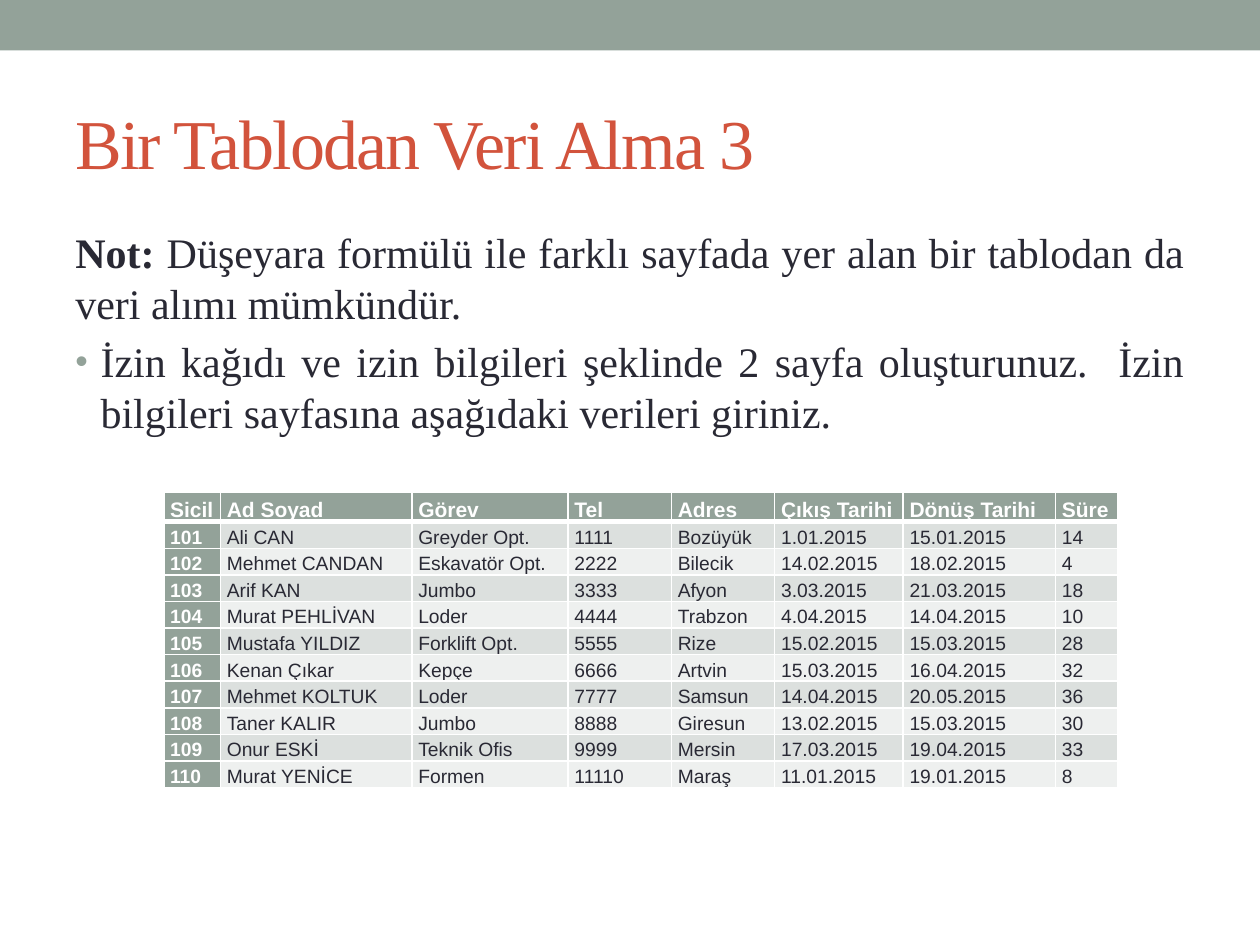
import pptx
import pptx.util
import pptx.dml.color
import pptx.enum.shapes
import pptx.enum.text
import pptx.oxml
import pptx.oxml.ns
from pptx.util import Inches
from lxml import etree

COLORS = {
    "sage": "93A299",
    "title": "D2533C",
    "text": "292934",
    "white": "FFFFFF",
    "odd_row": "DCE0DE",
    "even_row": "EEF0EF",
}
SERIF = "Times New Roman"
SANS = "Arial"
COLUMN_WIDTHS = [0.45, 1.52, 1.24, 0.82, 0.82, 1.02, 1.21, 0.49]
HEADER_HEIGHT = 0.22
LEAVE_RECORDS = [
    ["Sicil", "Ad Soyad", "Görev", "Tel", "Adres", "Çıkış Tarihi", "Dönüş Tarihi", "Süre"],
    ["101", "Ali CAN", "Greyder Opt.", "1111", "Bozüyük", "1.01.2015", "15.01.2015", "14"],
    ["102", "Mehmet CANDAN", "Eskavatör Opt.", "2222", "Bilecik", "14.02.2015", "18.02.2015", "4"],
    ["103", "Arif KAN", "Jumbo", "3333", "Afyon", "3.03.2015", "21.03.2015", "18"],
    ["104", "Murat PEHLİVAN", "Loder", "4444", "Trabzon", "4.04.2015", "14.04.2015", "10"],
    ["105", "Mustafa YILDIZ", "Forklift Opt.", "5555", "Rize", "15.02.2015", "15.03.2015", "28"],
    ["106", "Kenan Çıkar", "Kepçe", "6666", "Artvin", "15.03.2015", "16.04.2015", "32"],
    ["107", "Mehmet KOLTUK", "Loder", "7777", "Samsun", "14.04.2015", "20.05.2015", "36"],
    ["108", "Taner KALIR", "Jumbo", "8888", "Giresun", "13.02.2015", "15.03.2015", "30"],
    ["109", "Onur ESKİ", "Teknik Ofis", "9999", "Mersin", "17.03.2015", "19.04.2015", "33"],
    ["110", "Murat YENİCE", "Formen", "11110", "Maraş", "11.01.2015", "19.01.2015", "8"],
]


def rgb(name):
    return pptx.dml.color.RGBColor.from_string(COLORS[name])


def set_font(font, name, size, color, bold=None):
    font.name = name
    font.size = pptx.util.Pt(size)
    font.color.rgb = rgb(color)
    font.bold = bold


def add_text_frame(slide, left, top, width, height):
    shape = slide.shapes.add_textbox(left, top, width, height)
    shape.text_frame.word_wrap = True
    return shape.text_frame


def add_band(slide, left, top, width, height):
    band = slide.shapes.add_shape(
        pptx.enum.shapes.MSO_SHAPE.RECTANGLE, left, top, width, height)
    band.shadow.inherit = False
    band.fill.solid()
    band.fill.fore_color.rgb = rgb("sage")
    band.line.fill.background()


def add_title(slide, left, top, width, height):
    frame = add_text_frame(slide, left, top, width, height)
    frame.vertical_anchor = pptx.enum.text.MSO_ANCHOR.MIDDLE
    paragraph = frame.paragraphs[0]
    run = paragraph.add_run()
    run.text = "Bir Tablodan Veri Alma 3"
    set_font(paragraph.font, SERIF, 40, "title")
    run._r.get_or_add_rPr().set("spc", "-100")


def add_bullet(paragraph):
    properties = paragraph._p.get_or_add_pPr()
    properties.set("marL", str(Inches(0.2)))
    properties.set("indent", str(-Inches(0.2)))
    color = etree.SubElement(properties, pptx.oxml.ns.qn("a:buClr"))
    etree.SubElement(color, pptx.oxml.ns.qn("a:srgbClr"), val=COLORS["sage"])
    etree.SubElement(properties, pptx.oxml.ns.qn("a:buSzPct"), val="85000")
    etree.SubElement(properties, pptx.oxml.ns.qn("a:buFont"), typeface=SANS)
    etree.SubElement(properties, pptx.oxml.ns.qn("a:buChar"), char="•")


def add_body(slide, left, top, width, height):
    frame = add_text_frame(slide, left, top, width, height)
    note = frame.paragraphs[0]
    label = note.add_run()
    label.text = "Not: "
    label.font.bold = True
    note.add_run().text = (
        "Düşeyara formülü ile farklı sayfada yer alan bir tablodan da veri alımı mümkündür.")

    task = frame.add_paragraph()
    task.add_run().text = (
        "İzin kağıdı ve izin bilgileri şeklinde 2 sayfa oluşturunuz.  "
        "İzin bilgileri sayfasına aşağıdaki verileri giriniz.")
    add_bullet(task)
    task.space_before = pptx.util.Pt(4.8)

    for paragraph in (note, task):
        paragraph.alignment = pptx.enum.text.PP_ALIGN.JUSTIFY
        set_font(paragraph.font, SERIF, 24, "text")


def set_borders(cell, bottom_width):
    properties = cell._tc.get_or_add_tcPr()
    widths = {"a:lnL": 1, "a:lnR": 1, "a:lnT": 1, "a:lnB": bottom_width}
    for position, (tag, width) in enumerate(widths.items()):
        line = etree.Element(pptx.oxml.ns.qn(tag), w=str(pptx.util.Pt(width)))
        fill = etree.SubElement(line, pptx.oxml.ns.qn("a:solidFill"))
        etree.SubElement(fill, pptx.oxml.ns.qn("a:srgbClr"), val=COLORS["white"])
        properties.insert(position, line)


def fill_cell(cell, text, row_index, column_index):
    is_header = row_index == 0
    is_heading = is_header or column_index == 0
    band = "odd_row" if row_index % 2 else "even_row"
    cell.fill.solid()
    cell.fill.fore_color.rgb = rgb("sage" if is_heading else band)
    cell.margin_left = cell.margin_right = Inches(0.05)
    cell.margin_top = cell.margin_bottom = 0
    cell.vertical_anchor = pptx.enum.text.MSO_ANCHOR.BOTTOM
    paragraph = cell.text_frame.paragraphs[0]
    paragraph.add_run().text = text
    paragraph.line_spacing = 1.15
    set_font(paragraph.font, SANS, 12 if is_header else 11,
             "white" if is_heading else "text", is_heading)
    set_borders(cell, 3 if is_header else 1)


def add_leave_table(slide, left, top, width, height):
    table = slide.shapes.add_table(
        len(LEAVE_RECORDS), len(COLUMN_WIDTHS), left, top, width, height).table
    header_height = Inches(HEADER_HEIGHT)
    row_height = (height - header_height) // (len(LEAVE_RECORDS) - 1)
    for column, column_width in zip(table.columns, COLUMN_WIDTHS):
        column.width = Inches(column_width)
    for row_index, record in enumerate(LEAVE_RECORDS):
        table.rows[row_index].height = row_height if row_index else header_height
        for column_index, text in enumerate(record):
            fill_cell(table.cell(row_index, column_index), text, row_index, column_index)


def main():
    presentation = pptx.Presentation()
    presentation.slide_width = Inches(10)
    presentation.slide_height = Inches(7.5)
    slide = presentation.slides.add_slide(presentation.slide_layouts[6])
    add_band(slide, 0, 0, Inches(10), Inches(0.4))
    add_title(slide, Inches(0.5), Inches(0.58), Inches(9), Inches(1.08))
    add_body(slide, Inches(0.5), Inches(1.75), Inches(9), Inches(5.33))
    add_leave_table(slide, Inches(1.3), Inches(3.91), Inches(7.57), Inches(2.3))
    presentation.save("out.pptx")


if __name__ == "__main__":
    main()
